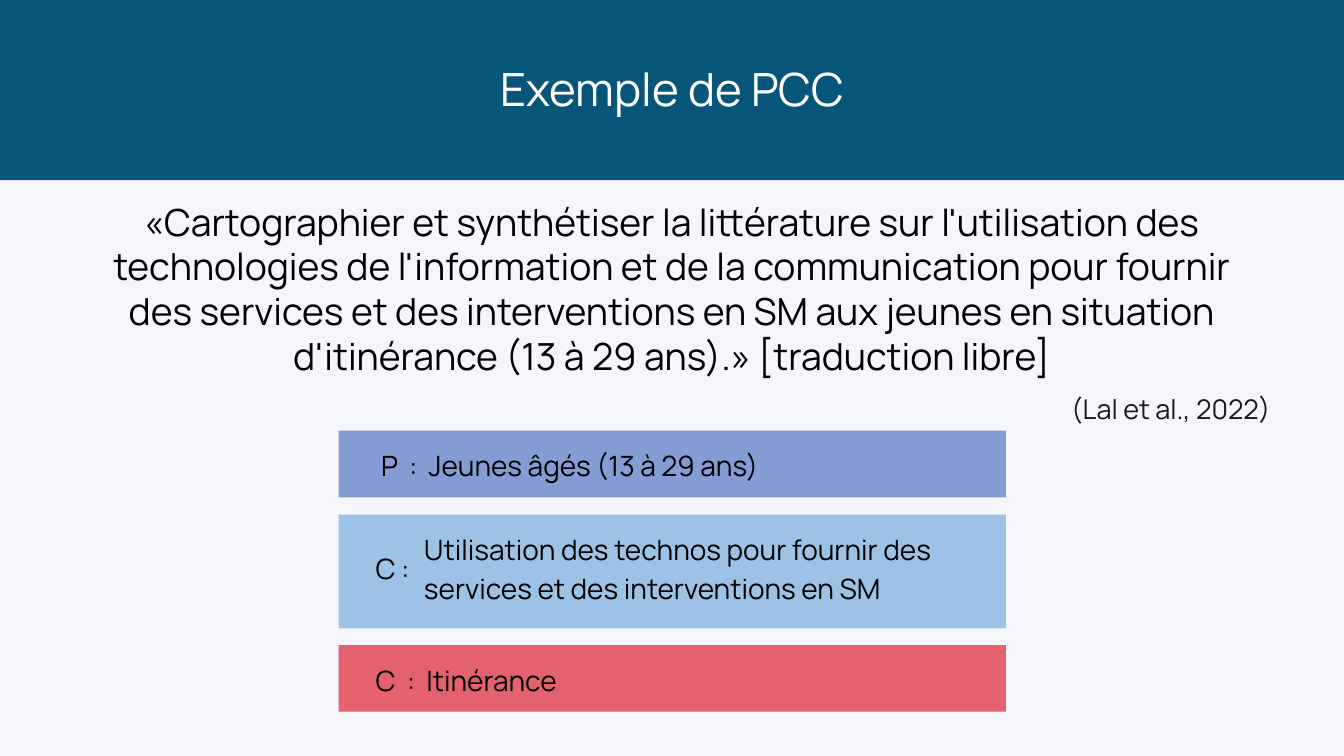
"""Build a slide that breaks a research question down into its PCC elements."""
from dataclasses import dataclass

import lxml.etree
import pptx
import pptx.dml.color
import pptx.enum.shapes
import pptx.enum.text
import pptx.oxml.ns
import pptx.util
from pptx.util import Inches

FONT = "Manrope"
COLORS = {
    "background": "F4F6FC",
    "banner": "075579",
    "population": "4B6EBF",
    "concept": "6FA8DC",
    "context": "E46270",
    "title": "FFFFFF",
    "citation": "191919",
    "text": "000000",
}
ALIGN = pptx.enum.text.PP_ALIGN
BAND_LEFT, BAND_WIDTH = 5.04, 9.93


@dataclass
class Box:
    left: float
    top: float
    width: float
    height: float

    def lengths(self) -> list[int]:
        return [Inches(value) for value in (self.left, self.top, self.width, self.height)]


@dataclass
class Band:
    top: float
    height: float
    color: str
    opacity: int = 100


@dataclass
class Label:
    text: str
    box: Box
    size: float = 30
    spacing: float = 42
    color: str = "text"
    align: ALIGN = ALIGN.LEFT


TITLE = Label("Exemple de PCC", Box(3.46, 0.83, 13.09, 0.92), 49, 64.7, "title", ALIGN.CENTER)
BANDS = [
    Band(6.41, 0.99, "population", 66),
    Band(7.66, 1.69, "concept", 66),
    Band(9.6, 0.99, "context"),
]
LABELS = [
    Label("(Lal et al., 2022)", Box(15.94, 5.79, 3.18, 0.55), 29, 38.3, "citation"),
    Label("P  :  Jeunes âgés (13 à 29 ans)", Box(5.67, 6.47, 6.51, 0.67), spacing=50.4),
    Label("C :", Box(5.59, 8.12, 0.64, 0.59)),
    Label(
        "Utilisation des technos pour fournir des services et des interventions en SM",
        Box(6.31, 7.84, 8.24, 1.18),
    ),
    Label("C  :  Itinérance", Box(5.59, 9.67, 8.75, 0.67), spacing=50.4),
    Label(
        "«Cartographier et synthétiser la littérature sur l'utilisation des technologies "
        "de l'information et de la communication pour fournir des services et des "
        "interventions en SM aux jeunes en situation d'itinérance (13 à 29 ans).» "
        "[traduction libre]",
        Box(1.47, 2.96, 17.05, 2.67), 40, 48, align=ALIGN.CENTER,
    ),
]


def rgb(name: str) -> pptx.dml.color.RGBColor:
    return pptx.dml.color.RGBColor.from_string(COLORS[name])


def write_text(shape, text: str, *, size: float, spacing: float, color: str, align: ALIGN) -> None:
    frame = shape.text_frame
    frame.word_wrap = True
    frame.auto_size = pptx.enum.text.MSO_AUTO_SIZE.NONE
    frame.vertical_anchor = pptx.enum.text.MSO_ANCHOR.TOP
    frame.margin_left = frame.margin_top = frame.margin_right = frame.margin_bottom = 0
    paragraph = frame.paragraphs[0]
    paragraph.alignment = align
    paragraph.line_spacing = pptx.util.Pt(spacing)
    run = paragraph.add_run()
    run.text = text
    run.font.name = FONT
    run.font.size = pptx.util.Pt(size)
    run.font.color.rgb = rgb(color)


def write_label(shape, label: Label) -> None:
    write_text(shape, label.text, size=label.size, spacing=label.spacing,
               color=label.color, align=label.align)


def add_rectangle(slide, box: Box, color: str, opacity: int = 100):
    shape = slide.shapes.add_shape(pptx.enum.shapes.MSO_SHAPE.RECTANGLE, *box.lengths())
    shape.shadow.inherit = False
    shape.line.fill.background()
    shape.fill.solid()
    shape.fill.fore_color.rgb = rgb(color)
    if opacity < 100:
        tag = pptx.oxml.ns.qn("a:srgbClr")
        fill_color = next(shape.element.spPr.iter(tag))
        alpha = lxml.etree.SubElement(fill_color, pptx.oxml.ns.qn("a:alpha"))
        alpha.set("val", str(opacity * 1000))
    return shape


def add_title(slide) -> None:
    banner = add_rectangle(slide, Box(0, 0, 20, 2.68), "banner")
    title = slide.shapes.title
    title.left, title.top, title.width, title.height = TITLE.box.lengths()
    title.element.addprevious(banner.element)
    write_label(title, TITLE)


def main() -> None:
    presentation = pptx.Presentation()
    presentation.slide_width, presentation.slide_height = Inches(20), Inches(11.25)
    slide = presentation.slides.add_slide(presentation.slide_layouts.get_by_name("Title Only"))
    slide.background.fill.solid()
    slide.background.fill.fore_color.rgb = rgb("background")
    add_title(slide)
    for band in BANDS:
        box = Box(BAND_LEFT, band.top, BAND_WIDTH, band.height)
        add_rectangle(slide, box, band.color, band.opacity)
    for label in LABELS:
        write_label(slide.shapes.add_textbox(*label.box.lengths()), label)
    presentation.save("out.pptx")


if __name__ == "__main__":
    main()
